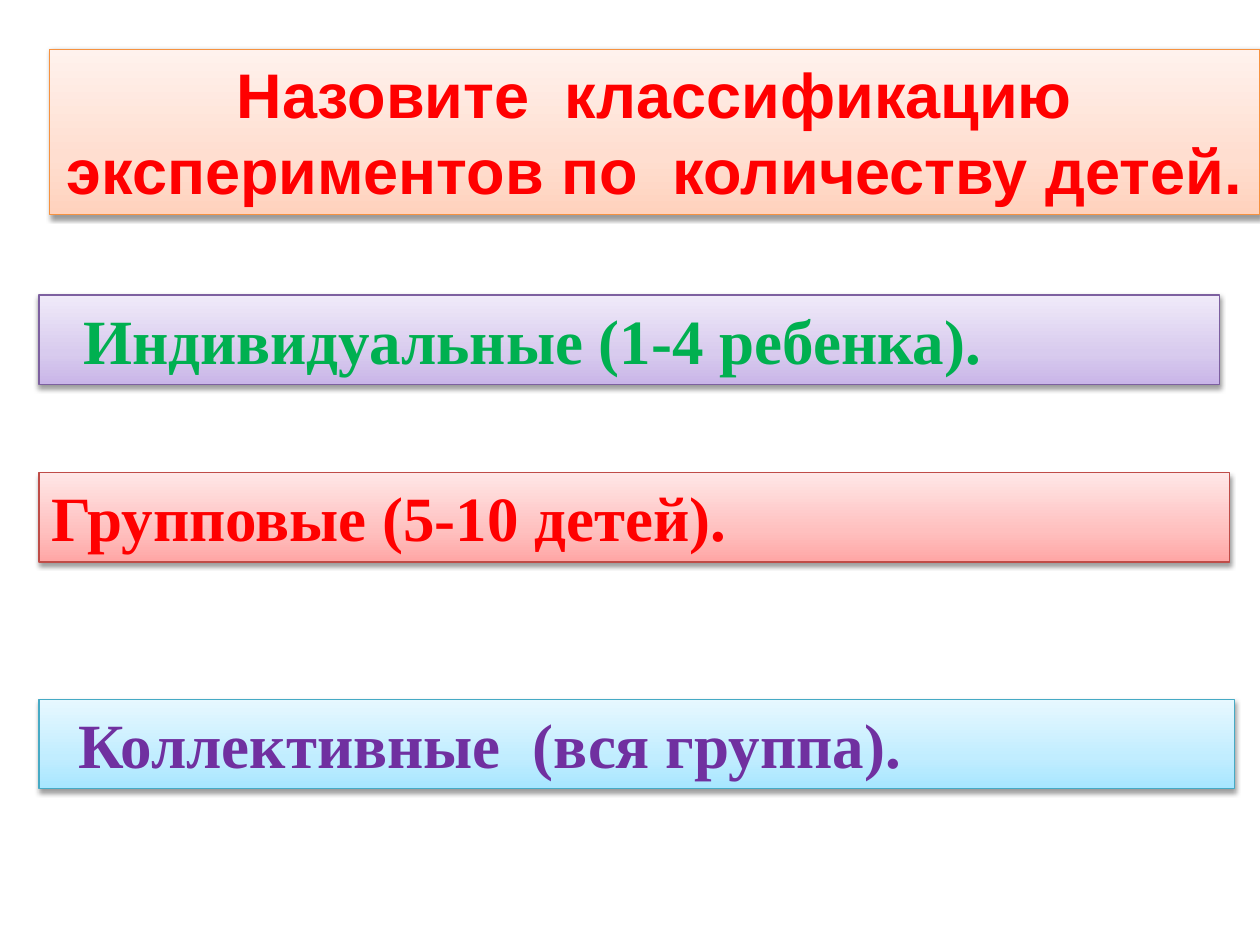
from lxml.etree import SubElement
from pptx import Presentation
from pptx.dml.color import RGBColor
from pptx.enum.shapes import MSO_SHAPE
from pptx.enum.text import MSO_ANCHOR, MSO_AUTO_SIZE, PP_ALIGN
from pptx.oxml.ns import qn
from pptx.util import Inches, Pt

W, H = Inches(10), Inches(7.5)
COLORS = {
    "red": "FF0000", "green": "00B050", "violet": "7030A0", "shadow": "000000",
    "orange_line": "F69240", "purple_line": "7D60A0",
    "rose_line": "BF4C48", "aqua_line": "46AAC5",
}
GRADIENTS = {
    "orange": ["FFD2BD", "FFDED0", "FFF2ED"],
    "purple": ["C9B5E8", "D8CBEE", "F0EAF9"],
    "rose": ["FFA6A5", "FFC0BF", "FFE7E7"],
    "aqua": ["A7E6FF", "C1EDFF", "E7F8FF"],
}
STOPS = [0, 35, 100]
ANSWER_ROWS = [
    ("Индивидуальные (1-4 ребенка).", "purple", "green", 0.312, 0.937, 0.25, PP_ALIGN.LEFT),
    ("Групповые (5-10 детей).", "rose", "red", 0.5, 0.945, 0, PP_ALIGN.JUSTIFY),
    ("Коллективные  (вся группа).", "aqua", "violet", 0.74, 0.949, 0.21, PP_ALIGN.JUSTIFY),
]


def set_attrs(obj, values):
    for name, value in values.items():
        setattr(obj, name, value)


def add_color(parent, value):
    return SubElement(parent, qn("a:srgbClr"), val=value)


def style_panel(sp, theme):
    sp.fill.gradient()
    sp.fill.gradient_angle = 90
    stops = sp._element.spPr.find(".//" + qn("a:gsLst"))
    for gs in list(stops):
        stops.remove(gs)
    for pos, value in zip(STOPS, GRADIENTS[theme]):
        add_color(SubElement(stops, qn("a:gs"), pos=str(pos * 1000)), value)
    sp.line.color.rgb = RGBColor.from_string(COLORS[theme + "_line"])
    sp.line.width = Pt(0.75)
    effects = SubElement(sp._element.spPr, qn("a:effectLst"))
    shadow = SubElement(effects, qn("a:outerShdw"), blurRad=str(Pt(3.1)),
                        dist=str(Pt(1.6)), dir="5400000", rotWithShape="0")
    SubElement(add_color(shadow, COLORS["shadow"]), qn("a:alpha"), val="38000")


def write_text(sp, text, font, color, align, indent=0):
    tf = sp.text_frame
    set_attrs(tf, {
        "word_wrap": True, "auto_size": MSO_AUTO_SIZE.SHAPE_TO_FIT_TEXT,
        "vertical_anchor": MSO_ANCHOR.TOP, "margin_left": Inches(0.1 + indent),
    })
    p = tf.paragraphs[0]
    p.alignment = align
    r = p.add_run()
    r.text = text
    set_attrs(r.font, {"name": font, "size": Pt(36), "bold": True})
    r.font.color.rgb = RGBColor.from_string(COLORS[color])


def add_question(s, left, top, width, height):
    sp = s.shapes.title
    set_attrs(sp, {"left": left, "top": top, "width": width, "height": height})
    style_panel(sp, "orange")
    write_text(sp, "Назовите  классификацию экспериментов по  количеству детей.",
               "Arial", "red", PP_ALIGN.CENTER)


def add_answers(s, left, top, width, height):
    for text, theme, color, row, share, indent, align in ANSWER_ROWS:
        sp = s.shapes.add_shape(MSO_SHAPE.RECTANGLE, left, top + int(height * row),
                                int(width * share), Inches(0.71))
        style_panel(sp, theme)
        write_text(sp, text, "Times New Roman", color, align, indent)


def main():
    prs = Presentation()
    set_attrs(prs, {"slide_width": W, "slide_height": H})
    s = prs.slides.add_slide(prs.slide_layouts[5])
    add_answers(s, Inches(0.31), 0, W, H)
    add_question(s, Inches(0.39), Inches(0.39), W - Inches(0.39), Inches(1.31))
    prs.save("out.pptx")


if __name__ == "__main__":
    main()
